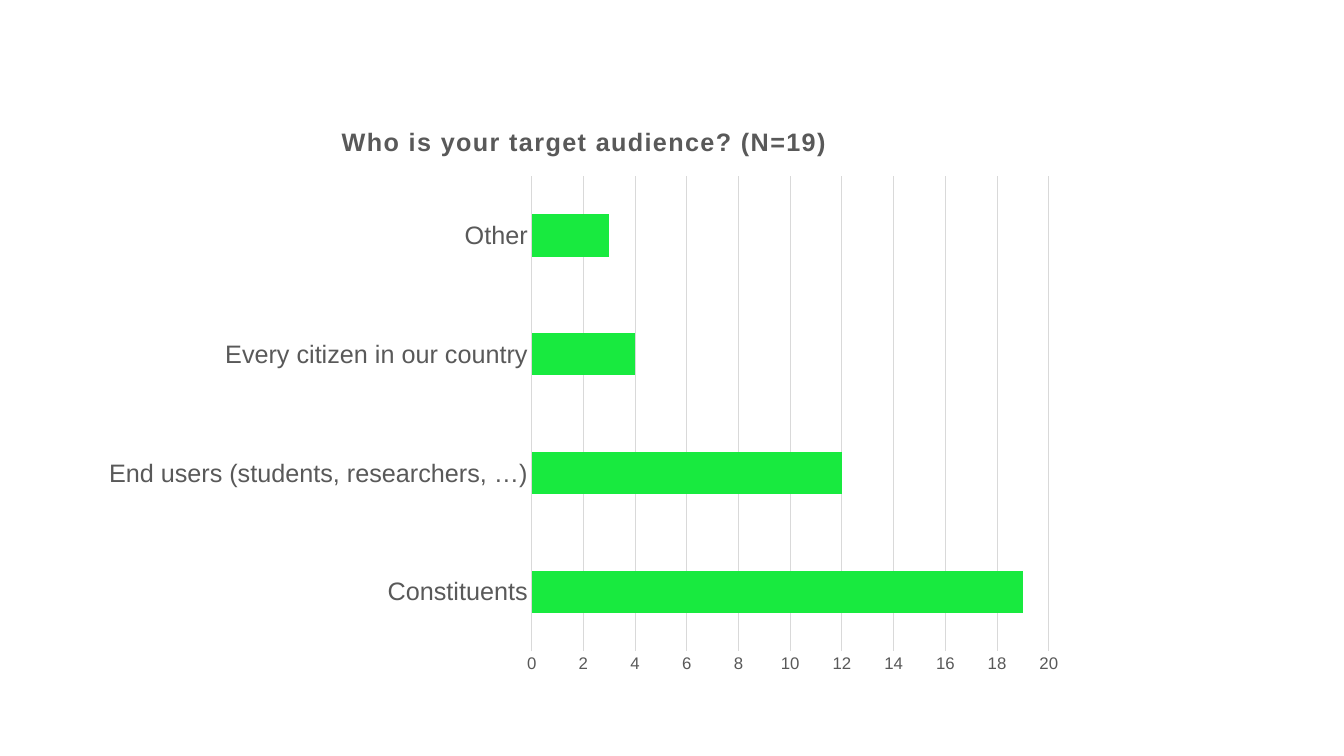
import pptx
import pptx.chart.data
import pptx.dml.color
import pptx.enum.chart
import pptx.oxml
import pptx.oxml.ns
import pptx.util
from pptx.util import Cm

COLORS = {"text": "595959", "rule": "D9D9D9", "bar": "18EA3F"}
FONT = "Arial"
QUESTION = "Who is your target audience? (N=19)"
ANSWERS = {
    "Constituents": 19,
    "End users (students, researchers, …)": 12,
    "Every citizen in our country": 4,
    "Other": 3,
}


def color(name):
    return pptx.dml.color.RGBColor.from_string(COLORS[name])


def format_font(font, size, bold=False):
    font.name = FONT
    font.size = pptx.util.Pt(size)
    font.bold = bold
    font.color.rgb = color("text")


def write_text(frame, text, size, bold=False, spacing=0):
    """Put one formatted span in the frame; spacing is in points."""
    span = frame.paragraphs[0].add_run()
    span.text = text
    format_font(span.font, size, bold)
    span._r.get_or_add_rPr().set("spc", str(round(spacing * 100)))


def draw_rule(line):
    line.color.rgb = color("rule")
    line.width = pptx.util.Pt(0.75)


def format_axis(axis, size):
    axis.major_tick_mark = pptx.enum.chart.XL_TICK_MARK.NONE
    axis.minor_tick_mark = pptx.enum.chart.XL_TICK_MARK.NONE
    format_font(axis.tick_labels.font, size)


def place_plot(chart, **fractions):
    """Fix the inner plot area as fractions of the chart frame."""
    plot_area = chart._chartSpace.chart.plotArea
    old_layout = plot_area.find(pptx.oxml.ns.qn("c:layout"))
    if old_layout is not None:
        plot_area.remove(old_layout)
    modes = '<c:xMode val="edge"/><c:yMode val="edge"/>'
    sizes = "".join(f'<c:{key} val="{value}"/>' for key, value in fractions.items())
    plot_area.insert(0, pptx.oxml.parse_xml(
        f'<c:layout {pptx.oxml.ns.nsdecls("c")}><c:manualLayout>'
        f'<c:layoutTarget val="inner"/>{modes}{sizes}</c:manualLayout></c:layout>'))


def add_audience_chart(slide):
    data = pptx.chart.data.CategoryChartData()
    data.categories = list(ANSWERS)
    data.add_series(QUESTION, list(ANSWERS.values()))
    chart = slide.shapes.add_chart(
        pptx.enum.chart.XL_CHART_TYPE.BAR_CLUSTERED,
        Cm(2.26), Cm(2.62), Cm(24.92), Cm(14.66), data).chart
    format_font(chart.font, 10)
    chart.has_legend = False
    chart.has_title = True
    write_text(chart.chart_title.text_frame, QUESTION, size=18, bold=True, spacing=1)
    chart.chart_title.include_in_layout = False

    format_axis(chart.category_axis, 18)
    draw_rule(chart.category_axis.format.line)

    values = chart.value_axis
    format_axis(values, 12)
    values.minimum_scale, values.maximum_scale, values.major_unit = 0, 20, 2
    values.format.line.fill.background()
    values.has_major_gridlines = True
    draw_rule(values.major_gridlines.format.line)

    plot = chart.plots[0]
    plot.gap_width = 182
    plot.vary_by_categories = False
    bars = plot.series[0].format
    bars.fill.solid()
    bars.fill.fore_color.rgb = color("bar")
    place_plot(chart, x=0.447, y=0.124, w=0.523, h=0.817)


def main():
    deck = pptx.Presentation()
    deck.slide_width, deck.slide_height = Cm(33.87), Cm(19.05)
    blank = deck.slide_layouts.get_by_name("Blank")
    add_audience_chart(deck.slides.add_slide(blank))
    deck.save("out.pptx")


if __name__ == "__main__":
    main()
